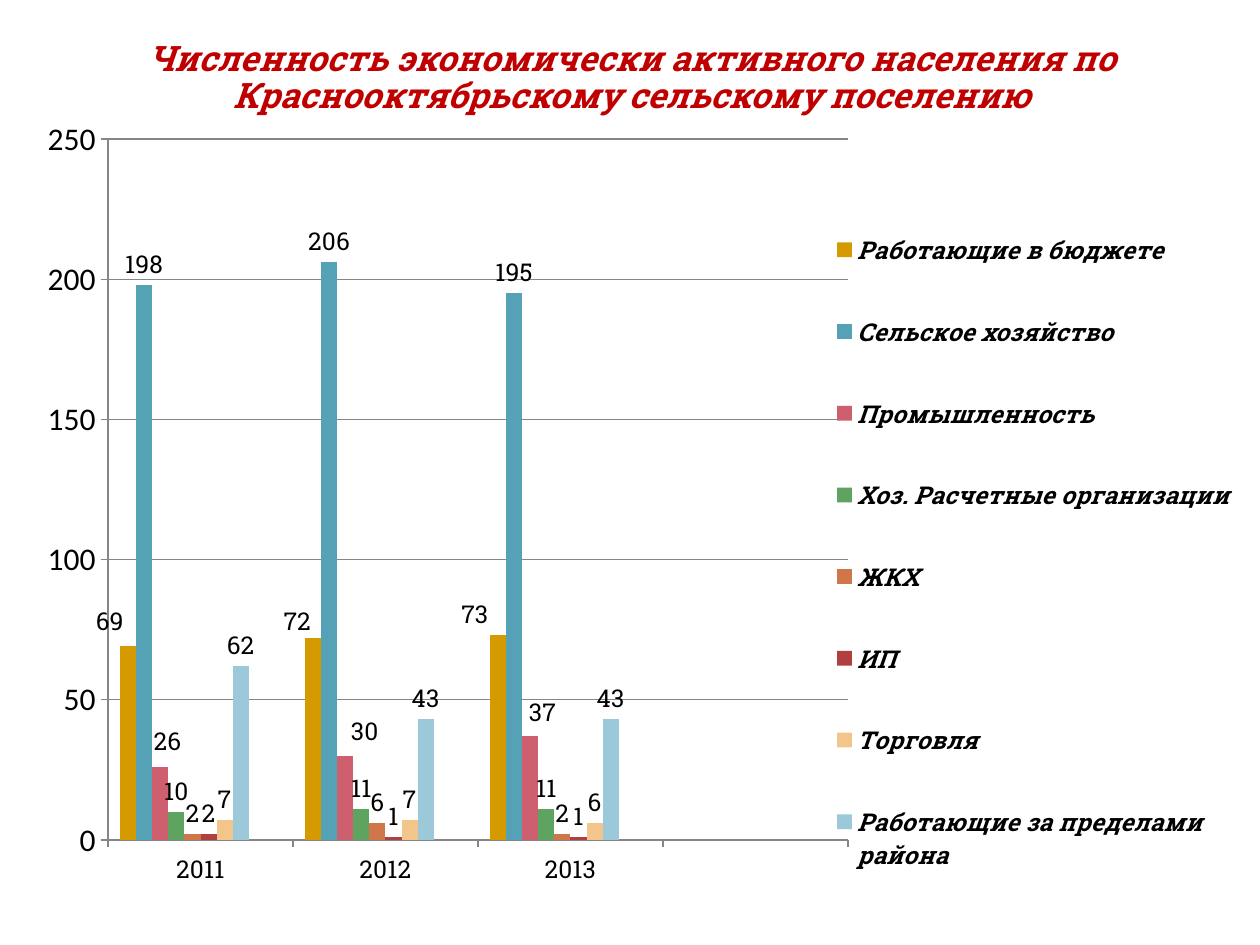
from lxml.etree import SubElement
from pptx import Presentation
from pptx.chart.data import CategoryChartData
from pptx.dml.color import RGBColor
from pptx.enum.chart import XL_CHART_TYPE, XL_LABEL_POSITION, XL_LEGEND_POSITION, XL_TICK_MARK
from pptx.enum.text import MSO_ANCHOR, MSO_AUTO_SIZE, PP_ALIGN
from pptx.oxml.ns import qn
from pptx.util import Inches, Pt

SLAB = "Roboto Slab"
AXIS_GRAY = "868686"
YEARS = ["2011", "2012", "2013", ""]
# Name, values by year, bar colour
SERIES = [
    ("Работающие в бюджете", (69, 72, 73, None), "D49A00"),
    ("Сельское хозяйство", (198, 206, 195, None), "55A1B6"),
    ("Промышленность", (26, 30, 37, None), "CD5F6F"),
    ("Хоз. Расчетные организации", (10, 11, 11, None), "5EA360"),
    ("ЖКХ", (2, 6, 2, None), "CF7748"),
    ("ИП", (2, 1, 1, None), "B03F3F"),
    ("Торговля", (7, 7, 6, None), "F4C58B"),
    ("Работающие за пределами района", (62, 43, 43, None), "9BC9D9"),
    ("Series 9", (None,) * 4, "E66C7D"),
    ("Series 10", (None,) * 4, "6BB76D"),
]
UNLISTED_SERIES = (8, 9)
# Label offsets as fractions of the chart: series -> one (x, y) per year
LABEL_SHIFTS = {
    0: [(-0.015, -0.005), (-0.013, 0.005), (-0.019, 0)],
    2: [(0.006, -0.006), (0.016, -0.005), (0.01, -0.004)],
}


def rgb(value):
    return RGBColor.from_string(value)


def set_font(font, size, name=SLAB, color="000000", bold=False, italic=False):
    font.size = Pt(size)
    font.name = name
    font.color.rgb = rgb(color)
    font.bold = bold
    font.italic = italic


def set_layout(parent, position, **values):
    """Give a chart part a manual layout, placed among its children at position."""
    for old in parent.findall(qn("c:layout")):
        parent.remove(old)
    layout = SubElement(parent, qn("c:layout"))
    parent.insert(position, layout)
    manual = SubElement(layout, qn("c:manualLayout"))
    for tag, value in values.items():
        SubElement(manual, qn(f"c:{tag}")).set("val", str(value))


def add_title(page, text):
    title = page.shapes.title
    title.left, title.top = Inches(0.78), Inches(0.31)
    title.width, title.height = Inches(8.47), Inches(0.63)
    frame = title.text_frame
    frame.text = text
    frame.word_wrap = True
    frame.auto_size = MSO_AUTO_SIZE.NONE
    frame.vertical_anchor = MSO_ANCHOR.MIDDLE
    paragraph = frame.paragraphs[0]
    paragraph.alignment = PP_ALIGN.CENTER
    paragraph.line_spacing = 0.9
    set_font(paragraph.font, 20, color="C00000", bold=True, italic=True)


def style_axes(chart):
    value_axis, category_axis = chart.value_axis, chart.category_axis
    value_axis.minimum_scale, value_axis.maximum_scale = 0, 250
    value_axis.major_unit = 50
    value_axis.has_major_gridlines = True
    set_font(value_axis.tick_labels.font, 18, "Calibri")
    set_font(category_axis.tick_labels.font, 14)
    for part in (value_axis, category_axis, value_axis.major_gridlines):
        part.format.line.color.rgb = rgb(AXIS_GRAY)
        part.format.line.width = Pt(0.75)
    for axis in (value_axis, category_axis):
        axis.major_tick_mark = XL_TICK_MARK.OUTSIDE


def style_series(series, color, shifts):
    series.format.fill.solid()
    series.format.fill.fore_color.rgb = rgb(color)
    series.invert_if_negative = False
    labels = series.data_labels
    labels.show_value = True
    labels.position = XL_LABEL_POSITION.OUTSIDE_END
    set_font(labels.font, 14)
    for index, _ in enumerate(shifts):
        label = series.points[index].data_label
        set_font(label.font, 14)
        label.position = XL_LABEL_POSITION.OUTSIDE_END
    for element, (x, y) in zip(series._element.iter(qn("c:dLbl")), shifts):
        set_layout(element, 1, x=x, y=y)


def add_legend(chart):
    chart.has_legend = True
    legend = chart.legend
    legend.position = XL_LEGEND_POSITION.RIGHT
    legend.include_in_layout = False
    set_font(legend.font, 14, bold=True, italic=True)
    element = legend._element
    set_layout(element, 1, xMode="edge", yMode="edge", x=0.66, y=0.08, w=0.34, h=0.89)
    for place, index in enumerate(UNLISTED_SERIES, start=1):
        entry = SubElement(element, qn("c:legendEntry"))
        SubElement(entry, qn("c:idx")).set("val", str(index))
        SubElement(entry, qn("c:delete")).set("val", "1")
        element.insert(place, entry)


def add_population_chart(page):
    data = CategoryChartData()
    data.categories = YEARS
    for name, values, _ in SERIES:
        data.add_series(name, values)
    chart = page.shapes.add_chart(
        XL_CHART_TYPE.COLUMN_CLUSTERED,
        Inches(0.16), Inches(0.94), Inches(9.69), Inches(6.56), data,
    ).chart
    chart.has_title = False
    set_font(chart.font, 18, "Calibri")
    plot = chart.plots[0]
    plot.gap_width, plot.overlap = 150, 0
    plot.vary_by_categories = False
    for index, series in enumerate(plot.series):
        style_series(series, SERIES[index][2], LABEL_SHIFTS.get(index, []))
    style_axes(chart)
    add_legend(chart)
    plot_area = chart._chartSpace.find(".//" + qn("c:plotArea"))
    set_layout(plot_area, 0, layoutTarget="inner", xMode="edge", yMode="edge",
               x=0.072, y=0.025, w=0.606, h=0.848)


def main():
    deck = Presentation()
    deck.slide_width, deck.slide_height = Inches(10), Inches(7.5)
    page = deck.slides.add_slide(deck.slide_layouts[0])
    subtitle = page.placeholders[1].element
    subtitle.getparent().remove(subtitle)
    add_title(page, "Численность экономически активного населения по "
                    "Краснооктябрьскому сельскому поселению")
    add_population_chart(page)
    deck.save("out.pptx")


if __name__ == "__main__":
    main()
